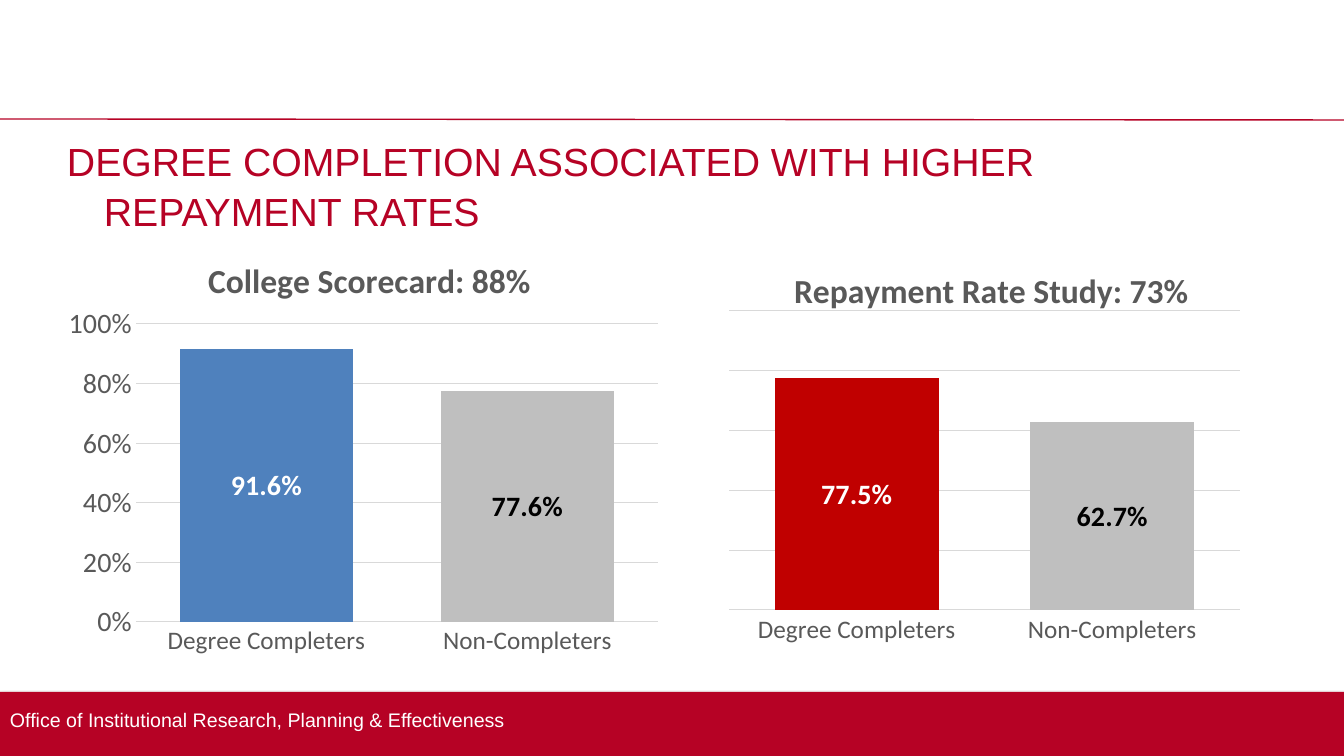
from dataclasses import dataclass

from lxml.etree import SubElement
from pptx import Presentation
from pptx.chart.data import CategoryChartData as Data
from pptx.dml.color import RGBColor as Color
from pptx.enum.chart import XL_CHART_TYPE as Kind, XL_LABEL_POSITION as Spot, XL_TICK_MARK as Tick
from pptx.enum.shapes import MSO_CONNECTOR as Link, MSO_SHAPE as Form
from pptx.enum.text import MSO_ANCHOR as Anchor, MSO_AUTO_SIZE as Fit, PP_ALIGN as Align
from pptx.oxml import parse_xml
from pptx.oxml.ns import nsdecls, qn
from pptx.util import Pt

SCALE = 914400 / 100.8
NAMES = ["Degree Completers", "Non-Completers"]


@dataclass(frozen=True)
class Theme:
    brand: str = "B60225"
    white: str = "FFFFFF"
    black: str = "000000"
    gray: str = "595959"
    rule: str = "D9D9D9"
    mute: str = "BFBFBF"
    blue: str = "4F81BD"
    red: str = "C00000"
    sans: str = "Arial"
    plot: str = "Calibri"
    head: int = 28
    foot: int = 14
    label: int = 20
    name: int = 18
    base: int = 16
    title: int = 24


def px(*nums):
    return [round(num * SCALE) for num in nums]


def style(font, size, color, face, bold=False):
    font.size = Pt(size)
    font.color.rgb = Color.from_string(color)
    font.name = face
    font.bold = bold


def write(frame, text, *, size, color, face, anchor=Anchor.TOP, inset=None, hang=0, lead=1.0):
    frame.word_wrap = True
    frame.auto_size = Fit.NONE
    frame.vertical_anchor = anchor
    if inset is not None:
        frame.margin_left = frame.margin_right = px(inset)[0]
    para = frame.paragraphs[0]
    para.alignment = Align.LEFT
    para.line_spacing = lead
    props = para._p.get_or_add_pPr()
    step = px(hang)[0]
    props.set("marL", str(step))
    props.set("indent", str(-step))
    run = para.add_run()
    run.text = text
    style(run.font, size, color, face)


def layout(parent, inner=False, **parts):
    old = parent.find(qn("c:layout"))
    if old is not None:
        parent.remove(old)
    node = parse_xml(f"<c:layout {nsdecls('c')}/>")
    box = SubElement(node, qn("c:manualLayout"))
    if inner:
        SubElement(box, qn("c:layoutTarget")).set("val", "inner")
    for key in "xy":
        SubElement(box, qn(f"c:{key}Mode")).set("val", "edge")
    for key, num in parts.items():
        SubElement(box, qn(f"c:{key}")).set("val", f"{num:.4f}")
    parent.insert(0 if inner else 1, node)


class Page:
    def __init__(self, deck, theme):
        self.theme = theme
        self.slide = deck.slides.add_slide(deck.slide_layouts[5])
        self.shapes = self.slide.shapes

    def band(self, *box):
        shape = self.shapes.add_shape(Form.RECTANGLE, *px(*box))
        shape.fill.solid()
        shape.fill.fore_color.rgb = Color.from_string(self.theme.brand)
        shape.line.fill.background()
        shape.shadow.inherit = False
        glow = shape._element.spPr.find(qn("a:effectLst"))
        glow.append(parse_xml(
            f'<a:outerShdw {nsdecls("a")} blurRad="39370" dist="22860" dir="5400000" rotWithShape="0">'
            f'<a:srgbClr val="{self.theme.black}"><a:alpha val="35000"/></a:srgbClr></a:outerShdw>'))

    def line(self, *ends):
        line = self.shapes.add_connector(Link.STRAIGHT, *px(*ends))
        line.line.color.rgb = Color.from_string(self.theme.brand)
        line.line.width = Pt(1)
        SubElement(line._element.spPr, qn("a:effectLst"))

    def foot(self, text, *box):
        look = self.theme
        shape = self.shapes.add_textbox(*px(*box))
        write(shape.text_frame, text, size=look.foot, color=look.white,
              face=look.sans, anchor=Anchor.MIDDLE, hang=38)

    def title(self, text, *box):
        look = self.theme
        shape = self.shapes.title
        shape.left, shape.top, shape.width, shape.height = px(*box)
        write(shape.text_frame, text, size=look.head, color=look.brand,
              face=look.sans, inset=0, hang=37, lead=1.05)

    def chart(self, text, vals, color, gap, box, plot, head, scale=True):
        look = self.theme
        data = Data(number_format="0.0%")
        data.categories = NAMES
        data.add_series("Series 1", vals)
        chart = self.shapes.add_chart(Kind.COLUMN_CLUSTERED, *px(*box), data).chart
        style(chart.font, look.base, look.black, look.plot)
        chart.has_legend = False
        chart.has_title = True
        run = chart.chart_title.text_frame.paragraphs[0].add_run()
        run.text = text
        style(run.font, look.title, look.gray, look.plot, True)
        chart.chart_title.include_in_layout = False
        left, top, wide, high = box
        layout(chart.chart_title._element, x=(head[0] - left) / wide, y=(head[1] - top) / high)
        layout(chart._chartSpace.chart.plotArea, True,
               x=(plot[0] - left) / wide, y=(plot[1] - top) / high,
               w=plot[2] / wide, h=plot[3] / high)
        self.axes(chart, scale)
        self.bars(chart.plots[0], color, gap)

    def axes(self, chart, scale):
        look = self.theme
        cat, val = chart.category_axis, chart.value_axis
        for axis, size in ((cat, look.name), (val, look.label)):
            axis.major_tick_mark = axis.minor_tick_mark = Tick.NONE
            style(axis.tick_labels.font, size, look.gray, look.plot)
        val.minimum_scale, val.maximum_scale, val.major_unit = 0, 1, 0.2
        val.tick_labels.number_format = "0%"
        val.tick_labels.number_format_is_linked = False
        val.format.line.fill.background()
        val.visible = scale
        val.has_major_gridlines = True
        for part in (cat, val.major_gridlines):
            part.format.line.color.rgb = Color.from_string(look.rule)
            part.format.line.width = Pt(0.75)

    def bars(self, plot, color, gap):
        look = self.theme
        plot.gap_width = gap
        plot.vary_by_categories = False
        series = plot.series[0]
        point = series.points[1]
        for part, fill in ((series, color), (point, look.mute)):
            part.format.fill.solid()
            part.format.fill.fore_color.rgb = Color.from_string(fill)
        tags = series.data_labels
        tags.show_value = True
        tags.number_format = "0.0%"
        tags.number_format_is_linked = False
        for part, ink in ((tags, look.white), (point.data_label, look.black)):
            style(part.font, look.label, ink, look.plot, True)
            part.position = Spot.CENTER


def main():
    deck = Presentation()
    deck.slide_width, deck.slide_height = px(1344, 756)
    look = Theme()
    page = Page(deck, look)
    page.band(0, 692, 1344, 64)
    page.line(0, 119, 1344, 120)
    page.foot("Office of Institutional Research, Planning & Effectiveness", 0, 694, 1344, 51)
    page.title("DEGREE COMPLETION ASSOCIATED WITH HIGHER REPAYMENT RATES", 67, 130, 1210, 88)
    page.chart("College Scorecard: 88%", (0.916, 0.776), look.blue, 51,
               (56, 234, 613, 432), (136, 324, 522, 298), (202, 252))
    page.chart("Repayment Rate Study: 73%", (0.775, 0.627), look.red, 56,
               (714, 243, 542, 432), (729, 311, 511, 299), (788, 262), scale=False)
    deck.save("out.pptx")


if __name__ == "__main__":
    main()
